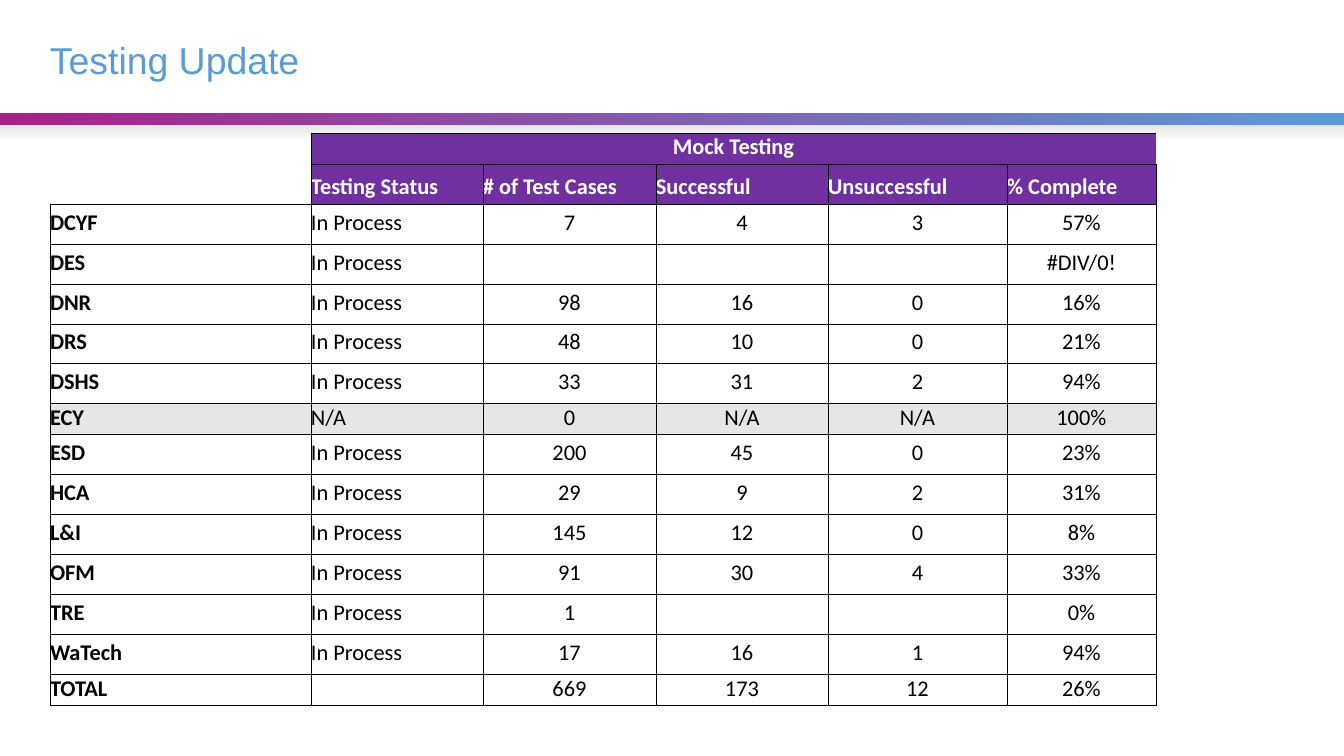
from lxml import etree
from pptx import Presentation
from pptx import util as u
from pptx.dml.color import RGBColor
from pptx.enum import shapes, text
from pptx.oxml.ns import qn

EMU_PER_PX = 914400 / 100.8
BLACK = RGBColor(0x00, 0x00, 0x00)
WHITE = RGBColor(0xFF, 0xFF, 0xFF)
PURPLE = RGBColor(0x70, 0x30, 0xA0)
MAGENTA = RGBColor(0xA8, 0x21, 0x8B)
BLUE = RGBColor(0x5B, 0x9B, 0xD5)
GREY = RGBColor(0xE7, 0xE6, 0xE6)


def px(n):
    return u.Emu(round(n * EMU_PER_PX))


def set_borders(cell, sides):
    """Draw thin black lines on the sides given, out of L, R, T and B."""
    tcPr = cell._tc.get_or_add_tcPr()
    for i, side in enumerate("LRTB"):
        ln = etree.Element(qn(f"a:ln{side}"), w=str(u.Pt(0.5)))
        if side in sides:
            fill = etree.SubElement(ln, qn("a:solidFill"))
            etree.SubElement(fill, qn("a:srgbClr"), val=str(BLACK))
        else:
            etree.SubElement(ln, qn("a:noFill"))
        tcPr.insert(i, ln)


prs = Presentation()
prs.slide_width, prs.slide_height = px(1344), px(756)
s = prs.slides.add_slide(prs.slide_layouts[6])

# Gradient band and the soft shade under it
bands = [(113, MAGENTA, BLUE, 0), (126, GREY, GREY, 270)]
for top, start, end, angle in bands:
    sp = s.shapes.add_shape(shapes.MSO_SHAPE.RECTANGLE, 0, px(top), px(1344), px(13))
    sp.shadow.inherit = False
    sp.line.fill.background()
    sp.fill.gradient()
    sp.fill.gradient_angle = angle
    for stop, color in zip(sp.fill.gradient_stops, (start, end)):
        stop.color.rgb = color
# The shade fades out at its lower edge
last_color = sp._element.spPr.findall(".//" + qn("a:srgbClr"))[-1]
etree.SubElement(last_color, qn("a:alpha"), val="0")

# Title
tf = s.shapes.add_textbox(px(50), px(25), px(1243), px(76)).text_frame
tf.word_wrap = True
tf.margin_left = tf.margin_right = tf.margin_top = tf.margin_bottom = 0
tf.vertical_anchor = text.MSO_ANCHOR.MIDDLE
p = tf.paragraphs[0]
p.text = "Testing Update"
p.line_spacing = u.Pt(26.7)
p.font.name, p.font.size, p.font.color.rgb = "Arial", u.Pt(26.7), BLUE

# Test results
rows = [
    ("", "Mock Testing", "", "", "", ""),
    ("", "Testing Status", "# of Test Cases", "Successful", "Unsuccessful", "% Complete"),
    ("DCYF", "In Process", "7", "4", "3", "57%"),
    ("DES", "In Process", "", "", "", "#DIV/0!"),
    ("DNR", "In Process", "98", "16", "0", "16%"),
    ("DRS", "In Process", "48", "10", "0", "21%"),
    ("DSHS", "In Process", "33", "31", "2", "94%"),
    ("ECY", "N/A", "0", "N/A", "N/A", "100%"),
    ("ESD", "In Process", "200", "45", "0", "23%"),
    ("HCA", "In Process", "29", "9", "2", "31%"),
    ("L&I", "In Process", "145", "12", "0", "8%"),
    ("OFM", "In Process", "91", "30", "4", "33%"),
    ("TRE", "In Process", "1", "", "", "0%"),
    ("WaTech", "In Process", "17", "16", "1", "94%"),
    ("TOTAL", "", "669", "173", "12", "26%"),
]
widths = [261, 172, 173, 172, 179, 149]
heights = [31 if row[0] in ("ECY", "TOTAL") else 40 for row in rows]
heights[0] = 31
tbl = s.shapes.add_table(len(rows), len(widths), px(50), px(133),
                         px(sum(widths)), px(sum(heights))).table
tbl.first_row = tbl.horz_banding = False
for col, width in zip(tbl.columns, widths):
    col.width = px(width)
for row, height in zip(tbl.rows, heights):
    row.height = px(height)
tbl.cell(0, 1).merge(tbl.cell(0, 5))

for i, row in enumerate(rows):
    for j, value in enumerate(row):
        cell = tbl.cell(i, j)
        header = i < 2 and j > 0
        cell.margin_left = cell.margin_right = cell.margin_top = 0
        cell.margin_bottom = px(3)
        at_bottom = i < 2 or value == "TOTAL"
        cell.vertical_anchor = text.MSO_ANCHOR.BOTTOM if at_bottom else text.MSO_ANCHOR.MIDDLE

        # Fill and borders
        if header or row[0] == "ECY":
            cell.fill.solid()
            cell.fill.fore_color.rgb = PURPLE if header else GREY
        else:
            cell.fill.background()
        if i == 0:
            set_borders(cell, "LTB" if header else "R")
        else:
            set_borders(cell, "RB" if i == 1 and j == 0 else "LRTB")

        # Text
        p = cell.text_frame.paragraphs[0]
        centred = i == 0 or (i > 1 and j > 1)
        p.alignment = text.PP_ALIGN.CENTER if centred else text.PP_ALIGN.LEFT
        if not value:
            etree.SubElement(p._p, qn("a:endParaRPr"), sz="1600")
            continue
        p.text = value
        r = p.runs[0]
        r.font.name, r.font.size = "Calibri", u.Pt(16)
        r.font.bold = header or j == 0
        r.font.color.rgb = WHITE if header else BLACK

prs.save("out.pptx")
